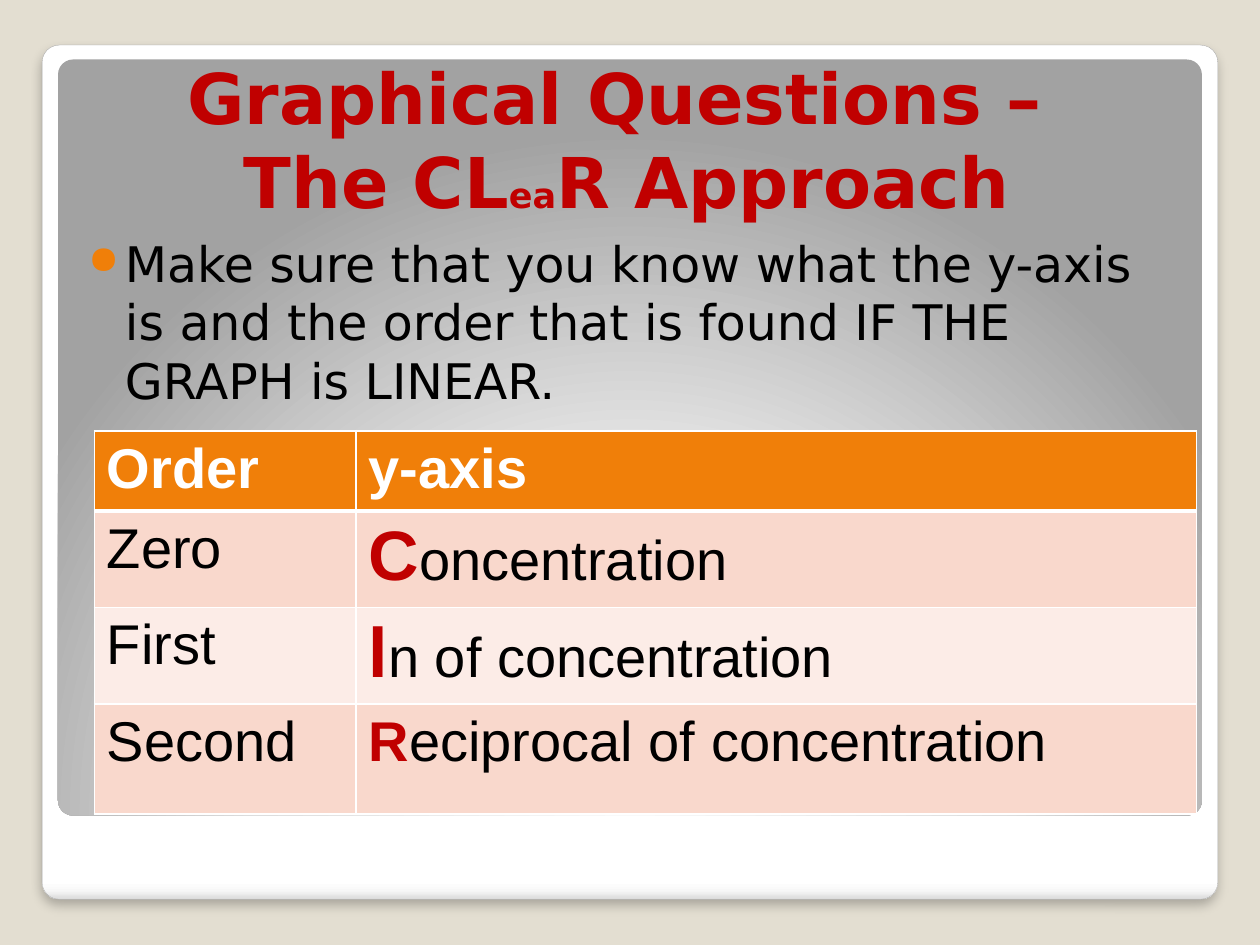
from lxml.etree import SubElement
from pptx import Presentation
from pptx.dml.color import RGBColor
from pptx.enum.shapes import MSO_SHAPE
from pptx.enum.text import MSO_ANCHOR, MSO_AUTO_SIZE, PP_ALIGN
from pptx.oxml import parse_xml
from pptx.oxml.ns import nsdecls, qn
from pptx.util import Cm, Pt

BACKGROUND = RGBColor(0xE3, 0xDE, 0xD1)
FRAME_LINE = RGBColor(0xA4, 0xA4, 0xA4)
ORANGE = RGBColor(0xF0, 0x7F, 0x09)
RED = RGBColor(0xC0, 0x00, 0x00)
BLACK = RGBColor(0x00, 0x00, 0x00)
WHITE = RGBColor(0xFF, 0xFF, 0xFF)
BANDS = [RGBColor(0xF9, 0xD8, 0xCC), RGBColor(0xFC, 0xEC, 0xE7)]

TITLE_FONT = "DejaVu Sans"
TABLE_FONT = "Arial"

# Runs are (text, size, colour, bold)
TITLE_LINES = [
    [("Graphical Questions – ", 40, RED, True)],
    [("The CL", 40, RED, True), ("ea", 20, RED, True), ("R Approach", 40, RED, True)],
]
BODY = ("Make sure that you know what the y-axis is and the order "
        "that is found IF THE GRAPH is LINEAR.")
HEADER = ["Order", "y-axis"]
# Order, highlighted initial, initial size, rest of the y-axis text
ORDERS = [
    ("Zero", "C", 40, "oncentration"),
    ("First", "l", 40, "n of concentration"),
    ("Second", "R", 32, "eciprocal of concentration"),
]
COLUMN_WIDTHS = [Cm(5.28), Cm(16.94)]
ROW_HEIGHTS = [Cm(1.22), Cm(1.22), Cm(1.22), Cm(2.21)]

FRAME_STOPS = [(0, "FFFFFF"), (98, "FFFFFF"), (99, "F7F7F7"), (100, "DADADA")]
PANEL_STOPS = [(0, "FFFFFF"), (55, "E1E1E1"), (100, "A2A2A2")]
DOWNWARD = '<a:lin ang="5400000" scaled="0"/>'
FROM_BELOW = ('<a:path path="circle">'
              '<a:fillToRect l="50000" t="175000" r="50000" b="-75000"/></a:path>')


def add_run(paragraph, text, size, color, bold, font_name):
    run = paragraph.add_run()
    run.text = text
    run.font.name = font_name
    run.font.size = Pt(size)
    run.font.bold = bold
    run.font.color.rgb = color


def add_panel(slide, left, top, width, height, stops, direction):
    """Add a rounded rectangle with a gradient fill."""
    panel = slide.shapes.add_shape(MSO_SHAPE.ROUNDED_RECTANGLE, left, top, width, height)
    panel.adjustments[0] = 0.02
    panel.line.fill.background()
    panel.shadow.inherit = False
    stop_xml = "".join(f'<a:gs pos="{position * 1000}"><a:srgbClr val="{color}"/></a:gs>'
                       for position, color in stops)
    gradient = parse_xml(f'<a:gradFill {nsdecls("a")} rotWithShape="1">'
                         f'<a:gsLst>{stop_xml}</a:gsLst>{direction}</a:gradFill>')
    panel.element.spPr.find(qn("a:prstGeom")).addnext(gradient)
    return panel


def add_soft_shadow(shape):
    effects = shape.element.spPr.find(qn("a:effectLst"))
    effects.append(parse_xml(
        f'<a:outerShdw {nsdecls("a")} blurRad="{Pt(6)}" dist="{Pt(4)}" dir="5400000" '
        'rotWithShape="0"><a:srgbClr val="000000"><a:alpha val="25000"/></a:srgbClr>'
        '</a:outerShdw>'))


def set_bullet(paragraph):
    properties = paragraph._p.get_or_add_pPr()
    properties.set("marL", str(Cm(0.74)))
    properties.set("indent", str(-Cm(0.74)))
    color = SubElement(properties, qn("a:buClr"))
    SubElement(color, qn("a:srgbClr"), val=str(ORANGE))
    SubElement(properties, qn("a:buSzPct"), val="80000")
    SubElement(properties, qn("a:buChar"), char="●")


def format_cell(cell, fill_color, bottom_width):
    properties = cell._tc.get_or_add_tcPr()
    for side, width in (("lnL", 1), ("lnR", 1), ("lnT", 1), ("lnB", bottom_width)):
        border = SubElement(properties, qn(f"a:{side}"), w=str(Pt(width)))
        fill = SubElement(border, qn("a:solidFill"))
        SubElement(fill, qn("a:srgbClr"), val=str(WHITE))
    cell.fill.solid()
    cell.fill.fore_color.rgb = fill_color


def add_title(slide):
    title = slide.shapes.title
    slide.shapes.element.append(title.element)  # in front of the panels
    title.left, title.top, title.width, title.height = Cm(1.27), Cm(1.7), Cm(22.73), Cm(2.92)
    frame = title.text_frame
    frame.auto_size = MSO_AUTO_SIZE.NONE
    frame.vertical_anchor = MSO_ANCHOR.BOTTOM
    paragraph = frame.paragraphs[0]
    paragraph.alignment = PP_ALIGN.CENTER
    for number, line in enumerate(TITLE_LINES):
        if number:
            paragraph.add_line_break()
        for run in line:
            add_run(paragraph, *run, TITLE_FONT)


def add_body(slide):
    body = slide.shapes.add_textbox(Cm(1.27), Cm(4.45), Cm(22.73), Cm(11.63))
    frame = body.text_frame
    frame.word_wrap = True
    frame.margin_left, frame.margin_top = Cm(0.51), Cm(0.25)
    frame.margin_right, frame.margin_bottom = Cm(0.25), Cm(0.13)
    paragraph = frame.paragraphs[0]
    paragraph.space_before = Pt(2.5)
    set_bullet(paragraph)
    add_run(paragraph, BODY, 28, BLACK, False, TITLE_FONT)


def add_order_table(slide):
    rows = [[[(text, 32, WHITE, True)] for text in HEADER]]
    for order, initial, size, rest in ORDERS:
        rows.append([[(order, 32, BLACK, False)],
                     [(initial, size, RED, True), (rest, 32, BLACK, False)]])
    graphic_frame = slide.shapes.add_table(len(rows), len(HEADER), Cm(1.9), Cm(8.69),
                                           sum(COLUMN_WIDTHS), Cm(7.72))
    table = graphic_frame.table
    for column, width in zip(table.columns, COLUMN_WIDTHS):
        column.width = width
    for row, height in zip(table.rows, ROW_HEIGHTS):
        row.height = height
    graphic_frame.height = Cm(7.72)
    for row_number, row in enumerate(rows):
        fill_color = BANDS[(row_number - 1) % 2] if row_number else ORANGE
        for column_number, runs in enumerate(row):
            cell = table.cell(row_number, column_number)
            format_cell(cell, fill_color, 1 if row_number else 3)
            for run in runs:
                add_run(cell.text_frame.paragraphs[0], *run, TABLE_FONT)


def main():
    presentation = Presentation()
    presentation.slide_width, presentation.slide_height = Cm(25.4), Cm(19.05)
    slide = presentation.slides.add_slide(presentation.slide_layouts[5])
    slide.background.fill.solid()
    slide.background.fill.fore_color.rgb = BACKGROUND

    frame = add_panel(slide, Cm(0.85), Cm(0.91), Cm(23.7), Cm(17.22), FRAME_STOPS, DOWNWARD)
    frame.line.color.rgb = FRAME_LINE
    frame.line.width = Pt(0.16)
    add_soft_shadow(frame)
    add_panel(slide, Cm(1.17), Cm(1.2), Cm(23.06), Cm(15.24), PANEL_STOPS, FROM_BELOW)

    add_title(slide)
    add_body(slide)
    add_order_table(slide)
    presentation.save("out.pptx")


if __name__ == "__main__":
    main()
